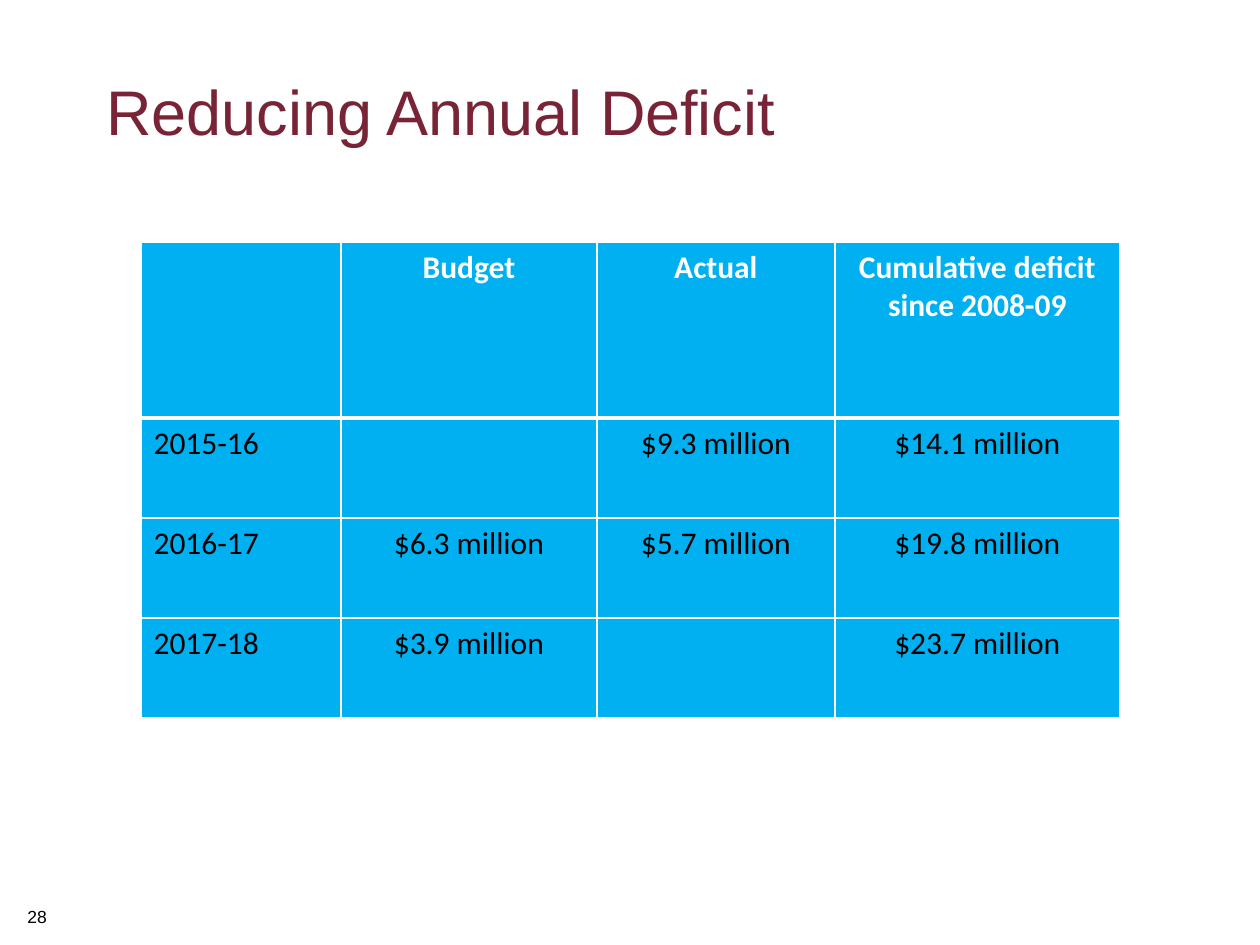
from dataclasses import dataclass

import lxml.etree
import pptx
import pptx.dml.color
import pptx.enum.text
import pptx.oxml.ns
import pptx.util

EMU_PER_PX = 914400 / 126
ALIGN = pptx.enum.text.PP_ALIGN


@dataclass(frozen=True)
class Theme:
    title_color: str = "782336"
    cell_fill: str = "00B0F0"
    white: str = "FFFFFF"
    black: str = "000000"
    heading_font: str = "Arial"
    table_font: str = "Calibri"
    title_size: int = 36
    table_size: int = 18
    number_size: int = 10
    rule: int = 1
    header_rule: int = 3


@dataclass(frozen=True)
class Label:
    text: str
    left: int
    top: int
    width: int
    height: int
    size: int
    color: str
    margin_top: int = 6


THEME = Theme()
LABELS = (
    Label("28", 15, 900, 110, 34, THEME.number_size, THEME.black),
    Label("Reducing Annual Deficit", 94, 60, 1071, 158,
          THEME.title_size, THEME.title_color, margin_top=12),
)
TABLE_LEFT, TABLE_TOP = 141, 242
COLUMN_WIDTHS = (200, 256, 238, 285)
ROW_HEIGHTS = (176, 100, 100, 100)
DEFICITS = (
    ("", "Budget", "Actual", "Cumulative deficit since 2008-09"),
    ("2015-16", "", "$9.3 million", "$14.1 million"),
    ("2016-17", "$6.3 million", "$5.7 million", "$19.8 million"),
    ("2017-18", "$3.9 million", "", "$23.7 million"),
)


def px(length: int) -> pptx.util.Emu:
    return pptx.util.Emu(round(length * EMU_PER_PX))


def rgb(color: str) -> pptx.dml.color.RGBColor:
    return pptx.dml.color.RGBColor.from_string(color)


def style_font(font, name: str, size: int, color: str, bold: bool = False) -> None:
    formats = {"name": name, "size": pptx.util.Pt(size), "bold": bold}
    for attribute, value in formats.items():
        setattr(font, attribute, value)
    font.color.rgb = rgb(color)


def add_label(slide, label: Label) -> None:
    box = slide.shapes.add_textbox(
        px(label.left), px(label.top), px(label.width), px(label.height))
    frame = box.text_frame
    frame.word_wrap = True
    frame.margin_top = px(label.margin_top)
    run = frame.paragraphs[0].add_run()
    run.text = label.text
    style_font(run.font, THEME.heading_font, label.size, label.color)


def add_borders(cell, widths: dict[str, int]) -> None:
    """Draw white rules; widths maps each side (L, R, T, B) to points."""
    qn = pptx.oxml.ns.qn
    properties = cell._tc.get_or_add_tcPr()
    for side, width in widths.items():
        line = lxml.etree.SubElement(
            properties, qn(f"a:ln{side}"), w=str(pptx.util.Pt(width)))
        fill = lxml.etree.SubElement(line, qn("a:solidFill"))
        lxml.etree.SubElement(fill, qn("a:srgbClr"), val=THEME.white)


def fill_cell(cell, text: str, row: int, column: int) -> None:
    is_header = row == 0
    add_borders(cell, {
        "L": THEME.rule,
        "R": THEME.rule,
        "T": THEME.header_rule if row == 1 else THEME.rule,
        "B": THEME.header_rule if is_header else THEME.rule,
    })
    cell.fill.solid()
    cell.fill.fore_color.rgb = rgb(THEME.cell_fill)
    if text:
        paragraph = cell.text_frame.paragraphs[0]
        paragraph.alignment = ALIGN.CENTER if column else ALIGN.LEFT
        run = paragraph.add_run()
        run.text = text
        style_font(run.font, THEME.table_font, THEME.table_size,
                   THEME.white if is_header else THEME.black, bold=is_header)


def add_deficit_table(slide) -> None:
    deficit_table = slide.shapes.add_table(
        len(ROW_HEIGHTS), len(COLUMN_WIDTHS), px(TABLE_LEFT), px(TABLE_TOP),
        px(sum(COLUMN_WIDTHS)), px(sum(ROW_HEIGHTS))).table
    deficit_table.horz_banding = False
    for column, width in zip(deficit_table.columns, COLUMN_WIDTHS):
        column.width = px(width)
    for row, height in zip(deficit_table.rows, ROW_HEIGHTS):
        row.height = px(height)
    for row, texts in enumerate(DEFICITS):
        for column, text in enumerate(texts):
            fill_cell(deficit_table.cell(row, column), text, row, column)


def main() -> None:
    presentation = pptx.Presentation()
    presentation.slide_width = px(1260)
    presentation.slide_height = px(945)
    slide = presentation.slides.add_slide(presentation.slide_layouts[6])
    for label in LABELS:
        add_label(slide, label)
    add_deficit_table(slide)
    presentation.save("out.pptx")


if __name__ == "__main__":
    main()
